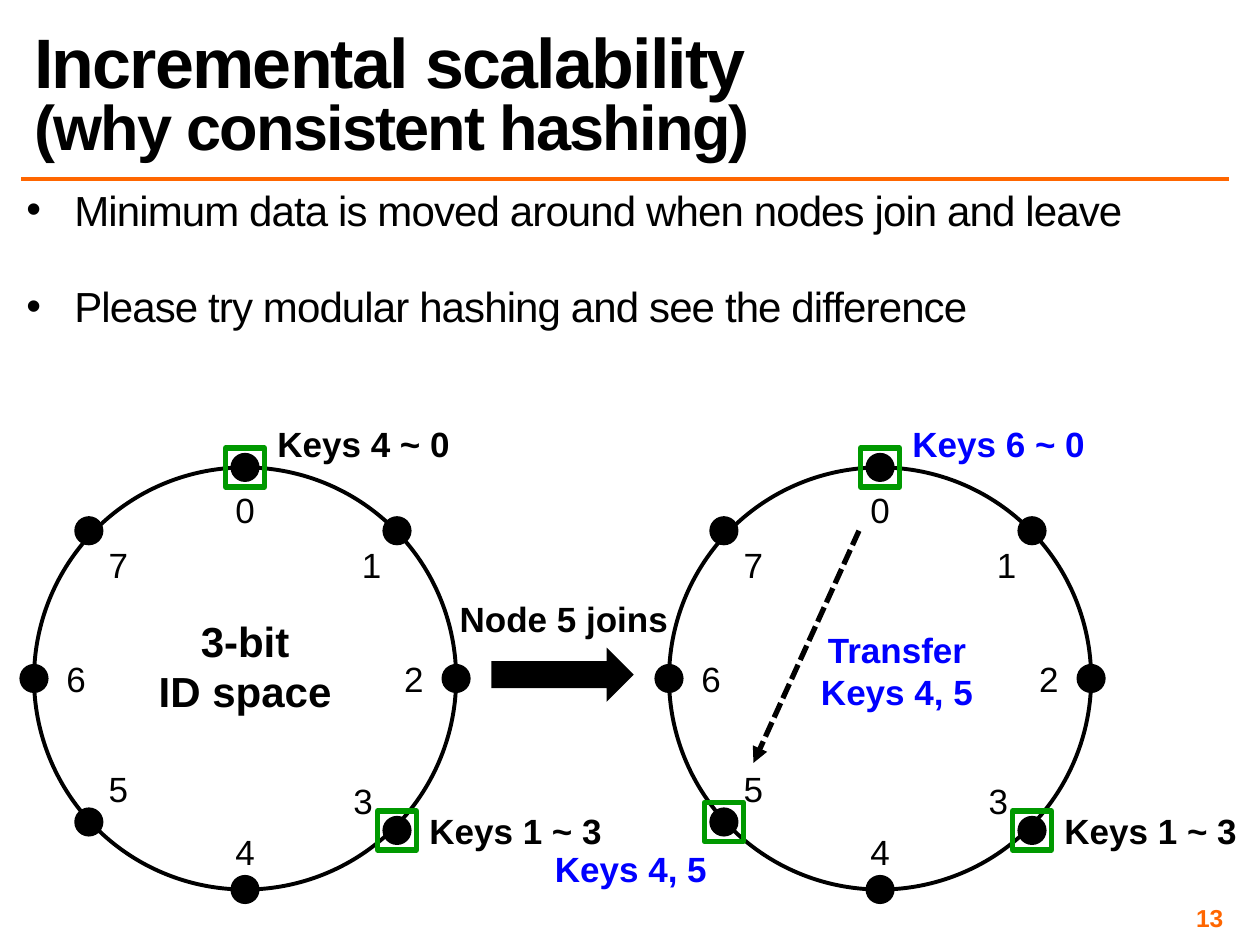
from collections import namedtuple

from lxml import etree
from pptx import Presentation
from pptx import util as u
from pptx.dml.color import RGBColor
from pptx.enum import dml, shapes, text
from pptx.oxml.ns import qn

Box = namedtuple("Box", "left top width height")
Node = namedtuple("Node", "dot label")

BLACK, BLUE, GREEN, ORANGE = "000000", "0000FF", "009900", "FF6600"
NODES = [
    Node((0.5, 0), (0.5, 0.1)),
    Node((0.86, 0.15), (0.8, 0.23)),
    Node((1, 0.5), (0.9, 0.5)),
    Node((0.86, 0.86), (0.78, 0.79)),
    Node((0.5, 1), (0.5, 0.91)),
    Node((0.13, 0.84), (0.2, 0.76)),
    Node((0, 0.5), (0.1, 0.5)),
    Node((0.13, 0.15), (0.2, 0.23)),
]
RING, RING_TOP, RING_LEFT, RING_STEP = 3.35, 3.71, 0.27, 5.04


def colour(value):
    return RGBColor.from_string(value)


def apply(target, **values):
    for name, value in values.items():
        setattr(target, name, value)


def inches(box):
    return [u.Inches(length) for length in box]


def point(box, share):
    return box.left + share[0] * box.width, box.top + share[1] * box.height


def around(centre, width, height):
    return Box(centre[0] - width / 2, centre[1] - height / 2, width, height)


def write(paragraph, words, size, shade=BLACK, bold=False, spacing=0):
    run = paragraph.add_run()
    run.text = words
    apply(run.font, name="Arial", size=u.Pt(size), bold=bold)
    run.font.color.rgb = colour(shade)
    if spacing:
        run._r.get_or_add_rPr().set("spc", str(int(spacing * 100)))


def caption(parent, box, lines, size=20, shade=BLACK, bold=True):
    frame = parent.add_textbox(*inches(box)).text_frame
    apply(frame, word_wrap=False, vertical_anchor=text.MSO_ANCHOR.MIDDLE)
    for index, words in enumerate(lines):
        paragraph = frame.add_paragraph() if index else frame.paragraphs[0]
        paragraph.alignment = text.PP_ALIGN.CENTER
        write(paragraph, words, size, shade, bold)
    return frame


def figure(parent, kind, box, fill=None, line=None, weight=2.25):
    item = parent.add_shape(kind, *inches(box))
    item.shadow.inherit = False
    for part, shade in ((item.fill, fill), (item.line.fill, line)):
        if shade:
            part.solid()
            part.fore_color.rgb = colour(shade)
        else:
            part.background()
    if line:
        item.line.width = u.Pt(weight)


def rule(parent, start, end, shade, weight):
    item = parent.add_connector(shapes.MSO_CONNECTOR.STRAIGHT, *inches(start + end))
    item.line.color.rgb = colour(shade)
    item.line.width = u.Pt(weight)
    etree.SubElement(item._element.spPr, qn("a:effectLst"))
    return item


def heading(slide, box):
    title = slide.shapes.title
    apply(title, **dict(zip(Box._fields, inches(box))))
    apply(title.text_frame, vertical_anchor=text.MSO_ANCHOR.BOTTOM,
          auto_size=text.MSO_AUTO_SIZE.NONE, word_wrap=True)
    paragraph = title.text_frame.paragraphs[0]
    apply(paragraph, alignment=text.PP_ALIGN.LEFT, line_spacing=0.8)
    write(paragraph, "Incremental scalability", 40, bold=True, spacing=-1)
    paragraph.add_line_break()
    write(paragraph, "(why consistent hashing)", 36, bold=True, spacing=-1)
    underline = box.top + box.height + 0.08
    rule(slide.shapes, (box.left, underline), (box.left + box.width, underline), ORANGE, 2)


def points(slide, box):
    body = slide.placeholders[1]
    apply(body, **dict(zip(Box._fields, inches(box))))
    margins = {f"margin_{side}": u.Inches(0.04) for side in ("left", "top", "right", "bottom")}
    frame = body.text_frame
    apply(frame, auto_size=text.MSO_AUTO_SIZE.NONE, word_wrap=True, **margins)
    items = (("Minimum data is moved around when nodes join and leave", 4.8),
             ("Please try modular hashing and see the difference", 32))
    for index, (words, gap) in enumerate(items):
        paragraph = frame.add_paragraph() if index else frame.paragraphs[0]
        apply(paragraph, line_spacing=0.8, space_before=u.Pt(gap))
        indent = u.Inches(0.38)
        properties = paragraph._p.get_or_add_pPr()
        properties.set("marL", str(indent))
        properties.set("indent", str(-indent))
        etree.SubElement(properties, qn("a:buChar")).set("char", "•")
        write(paragraph, words, 24, spacing=-0.5)


def ring(slide, box, members):
    group = slide.shapes.add_group_shape().shapes
    oval = shapes.MSO_SHAPE.OVAL
    figure(group, oval, box, line=BLACK)
    for number, node in enumerate(NODES):
        figure(group, oval, around(point(box, node.dot), 0.2, 0.2), BLACK, BLACK)
        caption(group, around(point(box, node.label), 0.36, 0.44), [str(number)], bold=False)
    for number, keys, shade, (across, down), width in members:
        x, y = point(box, NODES[number].dot)
        figure(group, shapes.MSO_SHAPE.RECTANGLE, around((x, y), 0.31, 0.31), line=GREEN, weight=3)
        caption(group, around((x + across, y + down), width, 0.44), [keys], shade=shade)
    return group


def transfer(group, box):
    arrow = rule(group, point(box, (0.45, 0.15)), point(box, (0.2, 0.7)), BLACK, 3)
    arrow.line.dash_style = dml.MSO_LINE.SQUARE_DOT
    etree.SubElement(arrow.line._get_or_add_ln(), qn("a:tailEnd")).set("type", "triangle")
    caption(group, around(point(box, (0.54, 0.48)), 1.42, 0.77),
            ["Transfer", "Keys 4, 5"], shade=BLUE)


def joining(slide, box):
    caption(slide.shapes, Box(box.left, box.top, box.width, box.height / 2), ["Node 5 joins"])
    figure(slide.shapes, shapes.MSO_SHAPE.RIGHT_ARROW,
           Box(box.left + 0.36, box.top + 0.45, 1.13, 0.43), BLACK)


def page_number(slide, box):
    frame = caption(slide.shapes, box, ["13"], 14, ORANGE)
    apply(frame, word_wrap=True, margin_right=u.Inches(0.04))
    frame.paragraphs[0].alignment = text.PP_ALIGN.RIGHT


def main():
    deck = Presentation()
    apply(deck, slide_width=u.Inches(10), slide_height=u.Inches(7.5))
    slide = deck.slides.add_slide(deck.slide_layouts[1])
    heading(slide, Box(0.17, 0.17, 9.58, 1.17))
    points(slide, Box(0.17, 1.5, 9.58, 5.51))
    page_number(slide, Box(7.42, 7.17, 2.33, 0.23))

    before, after = (Box(RING_LEFT + step * RING_STEP, RING_TOP, RING, RING) for step in range(2))
    beside, above, below = (0.98, 0), (0.98, -0.19), (-0.7, 0.37)
    unchanged = (3, "Keys 1 ~ 3 ", BLACK, beside, 1.66)
    first = ring(slide, before, [unchanged, (0, "Keys 4 ~ 0 ", BLACK, above, 1.66)])
    caption(first, around(point(before, (0.5, 0.47)), 1.59, 0.91), ["3-bit", "ID space"], 24)
    joining(slide, Box(3.54, 4.69, 1.87, 0.88))
    second = ring(slide, after, [unchanged, (0, "Keys 6 ~ 0 ", BLUE, above, 1.66),
                                 (5, "Keys 4, 5 ", BLUE, below, 1.49)])
    transfer(second, after)
    deck.save("out.pptx")


if __name__ == "__main__":
    main()
